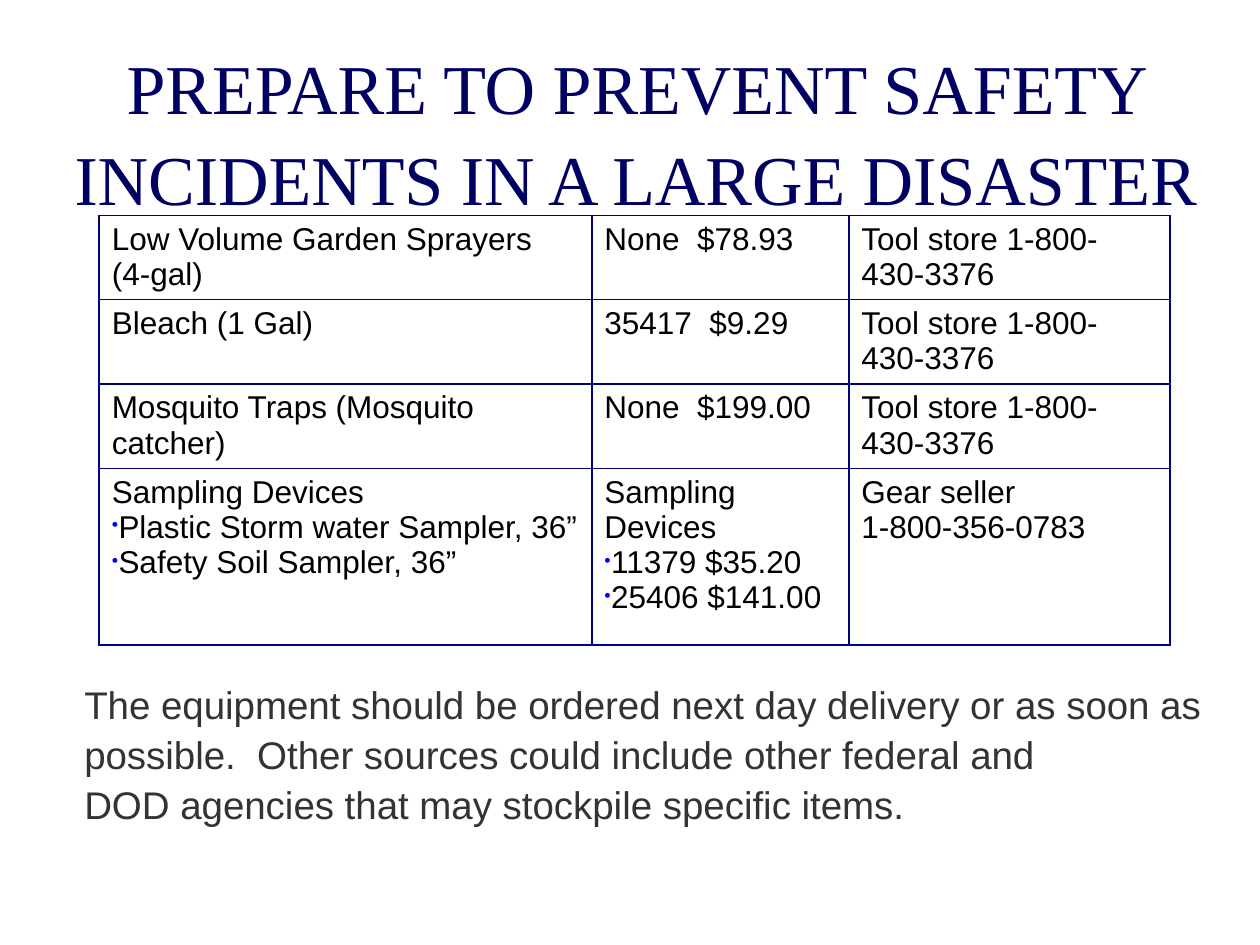
import pptx
import pptx.dml.color
import pptx.enum.text
import pptx.oxml.ns
import pptx.util
from lxml import etree

Cm = pptx.util.Cm
Align = pptx.enum.text.PP_ALIGN

TITLE = {"name": "Times New Roman", "size": pptx.util.Pt(40), "color": "000063"}
BODY = {"name": "Arial", "size": pptx.util.Pt(22), "color": "333333"}
CELL = {"name": "Arial", "size": pptx.util.Pt(18), "color": "000000"}
LOOSE = 1.08

STORE = "Tool store 1-800-430-3376"
ROWS = [
    ["Low Volume Garden Sprayers (4-gal)", "None  $78.93", STORE],
    ["Bleach (1 Gal)", "35417  $9.29", STORE],
    ["Mosquito Traps (Mosquito catcher)", "None  $199.00", STORE],
    ["Sampling Devices\n•Plastic Storm water Sampler, 36”\n•Safety Soil Sampler, 36”",
     "Sampling Devices\n•11379 $35.20\n•25406 $141.00",
     "Gear seller\n1-800-356-0783"],
]
WIDTHS = [9.93, 5.18, 6.48]
HEIGHTS = [1.7, 1.7, 1.7, 3.56]


def paint(text):
    return pptx.dml.color.RGBColor.from_string(text)


def add_node(parent, tag, **attrs):
    return etree.SubElement(parent, pptx.oxml.ns.qn(tag), attrs)


def add_dot(para):
    props = para._p.get_or_add_pPr()
    props.set("marL", "0")
    props.set("indent", "0")
    add_node(add_node(props, "a:buClr"), "a:srgbClr", val="0000FF")
    add_node(props, "a:buSzPct", val="60000")
    add_node(props, "a:buChar", char="•")


def fill_text(frame, text, style, align=Align.LEFT, space=None):
    """Write one paragraph a line; a line that starts with • gets a bullet."""
    frame.word_wrap = True
    for num, line in enumerate(text.split("\n")):
        para = frame.add_paragraph() if num else frame.paragraphs[0]
        para.alignment = align
        if space:
            para.line_spacing = space
        if line.startswith("•"):
            add_dot(para)
        run = para.add_run()
        run.text = line.removeprefix("•")
        for key, value in style.items():
            if key == "color":
                run.font.color.rgb = paint(value)
            else:
                setattr(run.font, key, value)


def add_text(slide, box, text, style, align=Align.LEFT):
    shape = slide.shapes.add_textbox(*map(Cm, box))
    fill_text(shape.text_frame, text, style, align, LOOSE)


def add_edges(cell):
    props = cell._tc.get_or_add_tcPr()
    for side in ("a:lnL", "a:lnR", "a:lnT", "a:lnB"):
        line = add_node(props, side, w=str(pptx.util.Pt(1)))
        add_node(add_node(line, "a:solidFill"), "a:srgbClr", val="000080")


def add_grid(slide, left, top):
    shape = slide.shapes.add_table(
        len(ROWS), len(WIDTHS), Cm(left), Cm(top), Cm(sum(WIDTHS)), Cm(sum(HEIGHTS)))
    table = shape.table
    table.first_row = table.horz_banding = False
    for col, width in zip(table.columns, WIDTHS):
        col.width = Cm(width)
    for row, height, texts in zip(table.rows, HEIGHTS, ROWS):
        row.height = Cm(height)
        for cell, text in zip(row.cells, texts):
            add_edges(cell)
            cell.fill.background()
            fill_text(cell.text_frame, text, CELL)


def main():
    deck = pptx.Presentation()
    deck.slide_width, deck.slide_height = Cm(25.4), Cm(19.05)
    slide = deck.slides.add_slide(deck.slide_layouts[6])
    add_grid(slide, 2, 4.34)
    add_text(slide, (1.45, 13.54, 23.93, 3.07),
             "The equipment should be ordered next day delivery or as soon as possible.  "
             "Other sources could include other federal and\n"
             "DOD agencies that may stockpile specific items.", BODY)
    add_text(slide, (1.07, 0.64, 23.5, 3.68),
             "PREPARE TO PREVENT SAFETY INCIDENTS IN A LARGE DISASTER",
             TITLE, Align.CENTER)
    deck.save("out.pptx")


if __name__ == "__main__":
    main()
